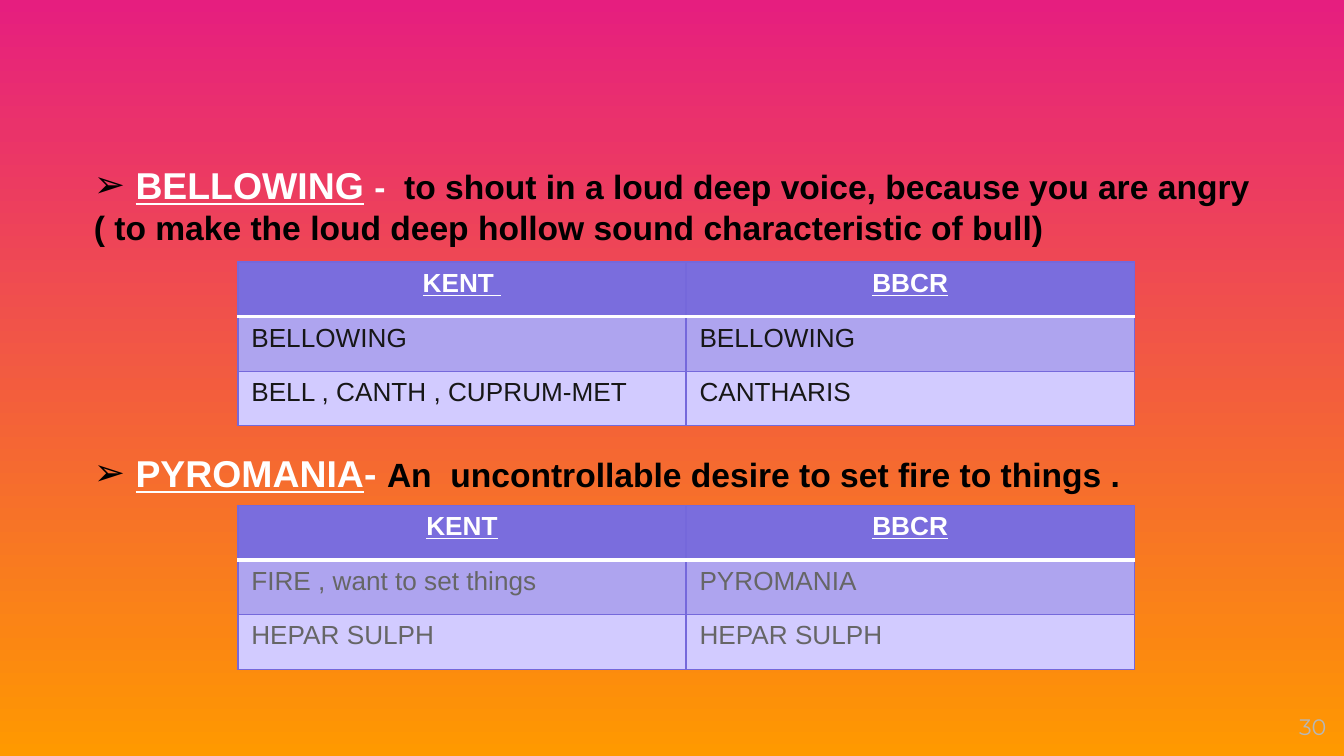
from lxml import etree
from pptx import Presentation
from pptx import util as u
from pptx.dml.color import RGBColor
from pptx.enum import text
from pptx.oxml.ns import qn

COLORS = {
    "top": "E61E7F", "bottom": "FF9900", "white": "FFFFFF", "black": "000000",
    "header": "7A6DDD", "odd": "AEA4EF", "even": "D2CBFF", "border": "7568DB",
    "dark": "171717", "gray": "666666", "number": "B7B7B7",
}
BULLET = "➢"
TERM = dict(size=20, color="white", bold=True, underline=True)
GAP = dict(size=20, color="white", bold=True)
DASH = dict(size=18, color="white", bold=True)
MEANING = dict(size=18, color="black", bold=True)

# Each definition: top, height, paragraphs of (text, format) runs
DEFINITIONS = [
    (1.16, 0.8, [
        [("BELLOWING", TERM), (" ", GAP), ("-", DASH),
         ("  to shout in a loud deep voice, because you are angry", MEANING)],
        [("( to make the loud deep hollow sound characteristic of bull)", MEANING)],
    ]),
    (3.3, 0.52, [
        [("PYROMANIA", TERM), ("- ", GAP),
         ("An  uncontrollable desire to set fire to things .", MEANING)],
    ]),
]
# Each table: top, body text color, rows
TABLES = [
    (1.95, "dark", [("KENT ", "BBCR"),
                    ("BELLOWING", "BELLOWING"),
                    ("BELL , CANTH , CUPRUM-MET", "CANTHARIS")]),
    (3.76, "gray", [("KENT", "BBCR"),
                    ("FIRE , want to set things", "PYROMANIA"),
                    ("HEPAR SULPH", "HEPAR SULPH")]),
]
TABLE_LEFT, TABLE_WIDTH, TABLE_HEIGHT = 1.77, 6.67, 1.22


def rgb(name):
    return RGBColor.from_string(COLORS[name])


def add_text(paragraph, content, size=14, color="black", bold=False,
             underline=False, font="Arial"):
    run = paragraph.add_run()
    run.text = content
    run.font.name, run.font.size = font, u.Pt(size)
    run.font.bold, run.font.underline = bold, underline
    run.font.color.rgb = rgb(color)


def add_color(parent, name):
    etree.SubElement(parent, qn("a:srgbClr"), val=COLORS[name])


def add_box(slide, left, top, width, height):
    frame = slide.shapes.add_textbox(*map(u.Inches, (left, top, width, height))).text_frame
    frame.word_wrap = True
    return frame


def hang(paragraph, bullet):
    """Give a hanging indent, with or without a bullet."""
    properties = paragraph._p.get_or_add_pPr()
    properties.set("marL", str(u.Inches(0.31)))
    properties.set("indent", str(u.Inches(-0.31)))
    if bullet:
        add_color(etree.SubElement(properties, qn("a:buClr")), "black")
        etree.SubElement(properties, qn("a:buFont"), typeface="Arial")
        etree.SubElement(properties, qn("a:buChar"), char=BULLET)
    else:
        etree.SubElement(properties, qn("a:buNone"))


def set_border(cell, side, color, points):
    line = etree.SubElement(cell._tc.get_or_add_tcPr(), qn("a:ln" + side),
                            w=str(u.Pt(points)))
    add_color(etree.SubElement(line, qn("a:solidFill")), color)


def add_definition(slide, top, height, paragraphs):
    frame = add_box(slide, 0.6, top, 8.98, height)
    for index, runs in enumerate(paragraphs):
        paragraph = frame.add_paragraph() if index else frame.paragraphs[0]
        hang(paragraph, bullet=index == 0)
        for content, style in runs:
            add_text(paragraph, content, **style)


def add_comparison(slide, top, body_color, rows):
    table = slide.shapes.add_table(
        len(rows), len(rows[0]), u.Inches(TABLE_LEFT), u.Inches(top),
        u.Inches(TABLE_WIDTH), u.Inches(TABLE_HEIGHT)).table
    purple, white = ("border", 0.75), ("white", 2)
    for r, row in enumerate(rows):
        header = r == 0
        for c, content in enumerate(row):
            cell = table.cell(r, c)
            borders = {"L": purple, "R": purple,
                       "T": white if r == 1 else purple,
                       "B": white if header else purple}
            for side, (color, points) in borders.items():
                set_border(cell, side, color, points)
            cell.fill.solid()
            cell.fill.fore_color.rgb = rgb(("header", "odd", "even")[r])
            paragraph = cell.text_frame.paragraphs[0]
            if header:
                paragraph.alignment = text.PP_ALIGN.CENTER
            add_text(paragraph, content, color="white" if header else body_color,
                     bold=header, underline=header)


def add_slide_number(slide):
    frame = add_box(slide, 9.27, 5.19, 0.6, 0.43)
    frame.margin_left = frame.margin_right = frame.margin_top = frame.margin_bottom = 0
    frame.vertical_anchor = text.MSO_ANCHOR.MIDDLE
    frame.paragraphs[0].alignment = text.PP_ALIGN.RIGHT
    add_text(frame.paragraphs[0], "30", size=12, color="number", font="Montserrat")


def main():
    presentation = Presentation()
    presentation.slide_width = u.Inches(10)
    presentation.slide_height = u.Inches(10 * 9 / 16)
    slide = presentation.slides.add_slide(presentation.slide_layouts[6])
    fill = slide.background.fill
    fill.gradient()
    fill.gradient_angle = 270
    for stop, name, position in zip(fill.gradient_stops, ("top", "bottom"), (0, 1)):
        stop.color.rgb, stop.position = rgb(name), position
    add_slide_number(slide)
    for definition in DEFINITIONS:
        add_definition(slide, *definition)
    for table in TABLES:
        add_comparison(slide, *table)
    presentation.save("out.pptx")


if __name__ == "__main__":
    main()
